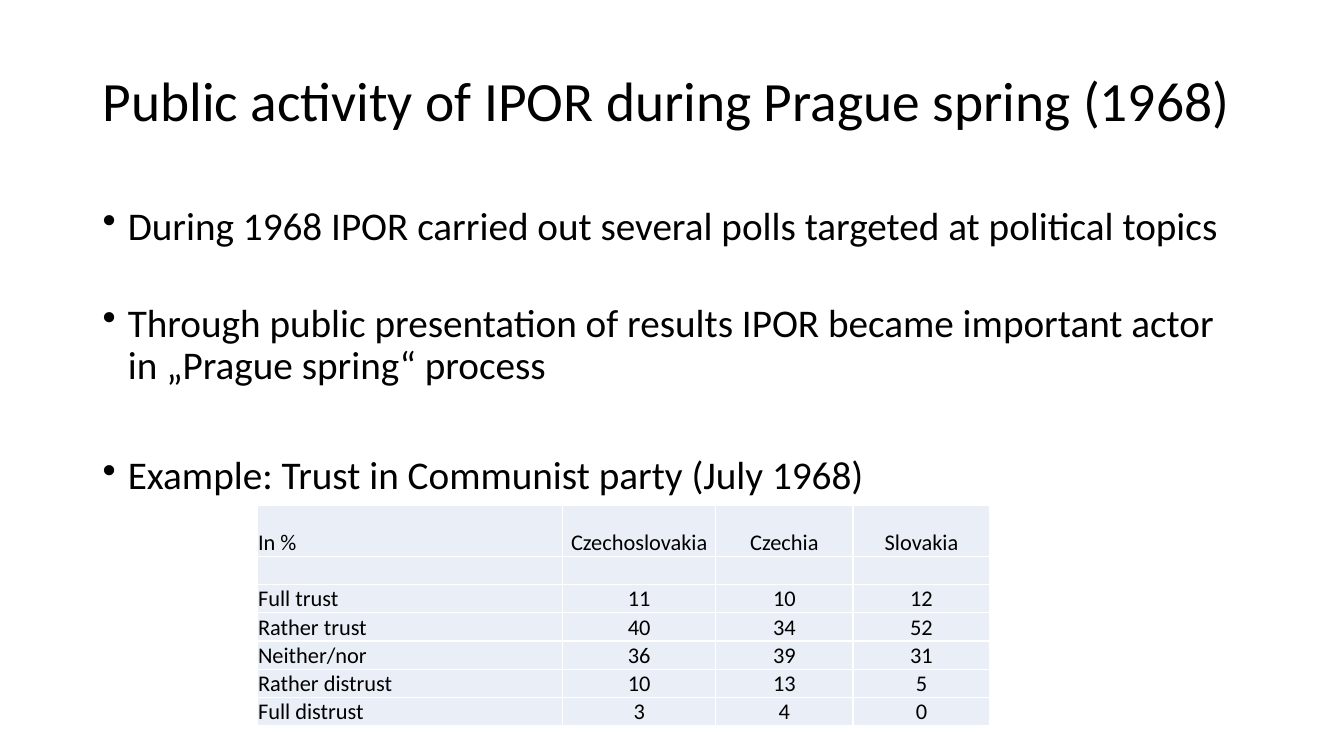
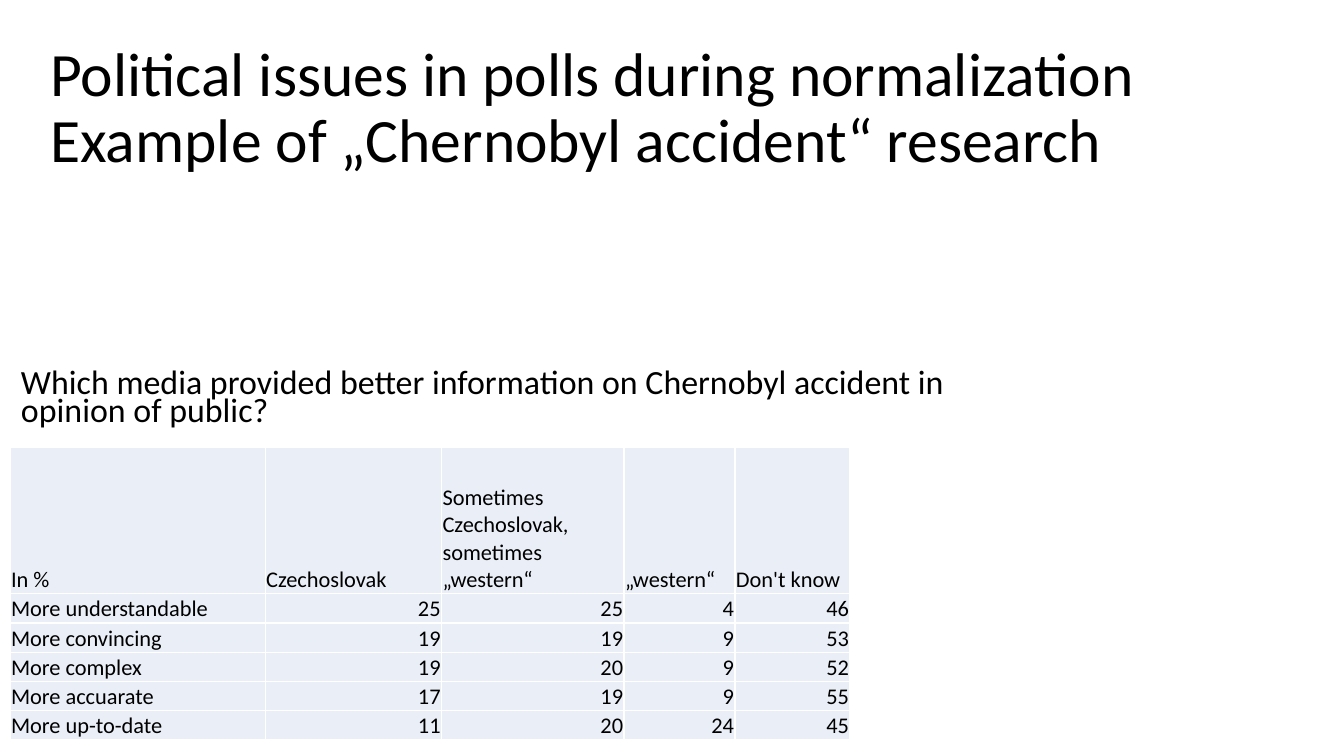
"""Build two slides on public opinion polls in Czechoslovakia."""
import pptx
import pptx.util
import pptx.dml.color
import pptx.enum.text
import pptx.oxml
import pptx.oxml.ns

Inches, Pt = pptx.util.Inches, pptx.util.Pt
RGB = pptx.dml.color.RGBColor
ALIGN, ANCHOR = pptx.enum.text.PP_ALIGN, pptx.enum.text.MSO_ANCHOR
BLACK, WHITE, PALE = RGB(0, 0, 0), RGB(255, 255, 255), RGB(0xEA, 0xEF, 0xF7)
FACE = "Calibri"
NS = pptx.oxml.ns.nsdecls("a")

POINTS = [
    ("During 1968 IPOR carried out several polls targeted at political topics", 0),
    ("Through public presentation of results IPOR became important actor in „Prague spring“ process", 39),
    ("Example: Trust in Communist party (July 1968)", 48.5),
]
QUERY = "Which media provided better information on Chernobyl accident in opinion of public?"

TRUST = {
    "at": (2.55, 5.01),
    "cols": [3.03, 1.52, 1.36, 1.36],
    "head": 0.51,
    "row": 0.28,
    "align": (ALIGN.CENTER, ALIGN.CENTER),
    "cells": [
        ("In %", "Czechoslovakia", "Czechia", "Slovakia"),
        ("", "", "", ""),
        ("Full trust", 11, 10, 12),
        ("Rather trust", 40, 34, 52),
        ("Neither/nor", 36, 39, 31),
        ("Rather distrust", 10, 13, 5),
        ("Full distrust", 3, 4, 0),
    ],
}
MEDIA = {
    "at": (0.1, 4.44),
    "cols": [2.53, 1.75, 1.81, 1.1, 1.14],
    "head": 1.45,
    "row": 0.29,
    "align": (ALIGN.LEFT, ALIGN.RIGHT),
    "cells": [
        ("In %", "Czechoslovak", "Sometimes Czechoslovak, sometimes „western“", "„western“", "Don't know"),
        ("More understandable", 25, 25, 4, 46),
        ("More convincing", 19, 19, 9, 53),
        ("More complex", 19, 20, 9, 52),
        ("More accuarate", 17, 19, 9, 55),
        ("More up-to-date", 11, 20, 24, 45),
    ],
}


def style(para, size):
    font = para.font
    font.name, font.size, font.color.rgb = FACE, Pt(size), BLACK


def add_text(slide, box, items, size, anchor=ANCHOR.MIDDLE, lead=0.9, dots=False):
    frame = slide.shapes.add_textbox(*map(Inches, box)).text_frame
    frame.word_wrap, frame.vertical_anchor = True, anchor
    for i, (text, gap) in enumerate(items):
        para = frame.add_paragraph() if i else frame.paragraphs[0]
        para.text = text
        para.line_spacing, para.space_before = lead, Pt(gap)
        style(para, size)
        if dots:
            props = para._p.get_or_add_pPr()
            props.set("marL", str(Inches(0.25)))
            props.set("indent", str(Inches(-0.25)))
            mark = pptx.oxml.parse_xml(f'<a:buChar {NS} char="•"/>')
            props.insert_element_before(mark, "a:tabLst", "a:defRPr", "a:extLst")


def add_title(slide, box, text, size):
    add_text(slide, box, [(text, 0)], size)


def fill_cell(cell, text, align):
    cell.margin_left = cell.margin_right = cell.margin_top = Inches(0.01)
    cell.margin_bottom = 0
    cell.vertical_anchor = ANCHOR.BOTTOM
    para = cell.text_frame.paragraphs[0]
    para.text, para.alignment = str(text), align
    style(para, 16)
    props = cell._tc.get_or_add_tcPr()
    for side in "LRTB":
        props.append(pptx.oxml.parse_xml(
            f'<a:ln{side} {NS} w="{Pt(1)}"><a:solidFill>'
            f'<a:srgbClr val="{WHITE}"/></a:solidFill></a:ln{side}>'))
    cell.fill.solid()
    cell.fill.fore_color.rgb = PALE


def add_grid(slide, data):
    cells, cols = data["cells"], data["cols"]
    rows = [data["head"]] + [data["row"]] * (len(cells) - 1)
    box = (*data["at"], sum(cols), sum(rows))
    table = slide.shapes.add_table(len(rows), len(cols), *map(Inches, box)).table
    table.first_row = table.horz_banding = False
    for col, width in zip(table.columns, cols):
        col.width = Inches(width)
    for row, high in zip(table.rows, rows):
        row.height = Inches(high)
    for r, line in enumerate(cells):
        for c, text in enumerate(line):
            align = data["align"][min(r, 1)] if c else ALIGN.LEFT
            fill_cell(table.cell(r, c), text, align)


def main():
    deck = pptx.Presentation()
    deck.slide_width, deck.slide_height = Inches(13.33), Inches(7.5)
    blank = deck.slide_layouts[6]

    slide = deck.slides.add_slide(blank)
    add_title(slide, (0.92, 0.4, 11.5, 1.26), "Public activity of IPOR during Prague spring (1968)", 39.6)
    add_text(slide, (0.92, 2, 11.5, 5.24), POINTS, 28, ANCHOR.TOP, dots=True)
    add_grid(slide, TRUST)

    slide = deck.slides.add_slide(blank)
    add_title(slide, (0.4, 0.36, 11.5, 1.45),
              "Political issues in polls during normalization\vExample of „Chernobyl accident“ research", 44)
    add_grid(slide, MEDIA)
    add_text(slide, (0.11, 3.61, 10.38, 0.72), [(QUERY, 0)], 24.2, lead=0.7)

    deck.save("out.pptx")


if __name__ == "__main__":
    main()
